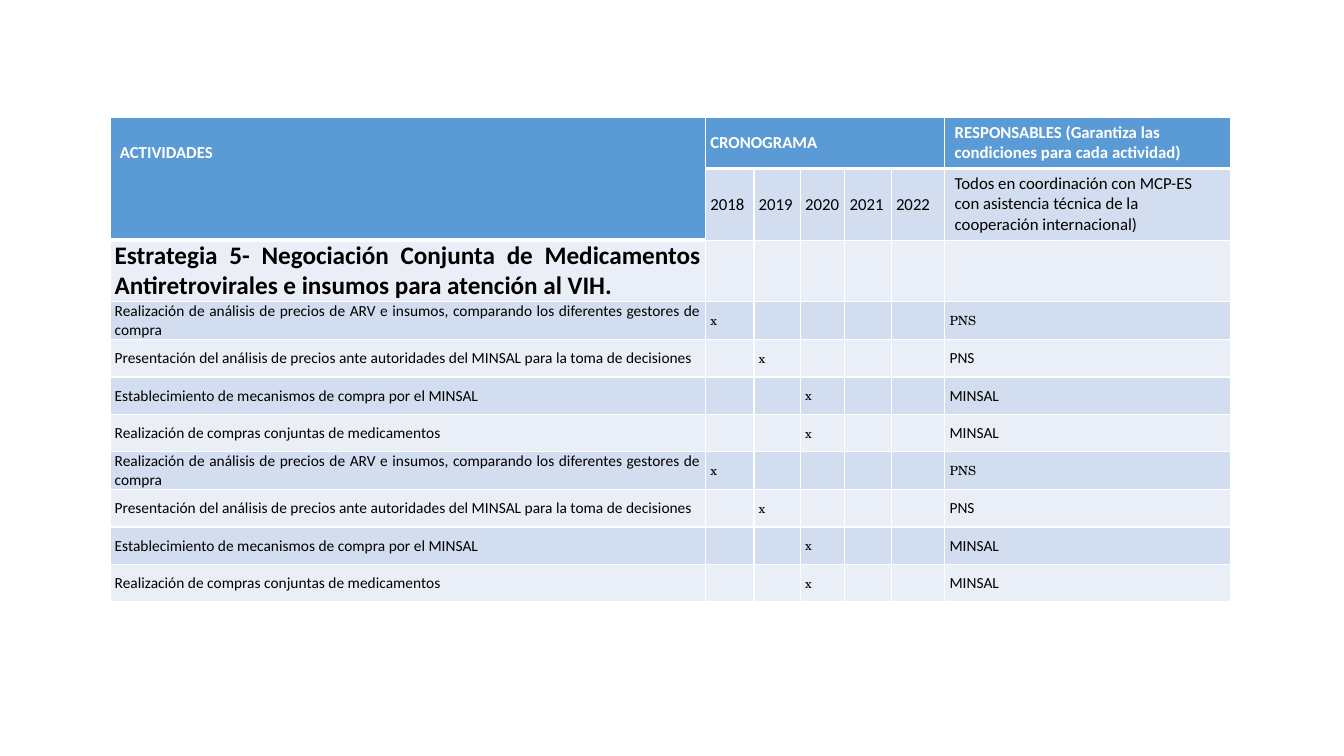
from dataclasses import dataclass

from lxml import etree
from pptx import Presentation
from pptx.dml.color import RGBColor
from pptx.enum.text import MSO_ANCHOR, PP_ALIGN
from pptx.oxml.ns import qn
from pptx.table import Table, _Cell
from pptx.util import Cm, Pt

LEFT, JUSTIFY = PP_ALIGN.LEFT, PP_ALIGN.JUSTIFY
TOP, MIDDLE = MSO_ANCHOR.TOP, MSO_ANCHOR.MIDDLE


@dataclass(frozen=True)
class Theme:
    header: str = "5B9BD5"
    bands: tuple[str, str] = ("D2DEEF", "EAEFF7")
    rule: str = "FFFFFF"
    header_text: str = "FFFFFF"
    text: str = "000000"
    font: str = "Calibri"
    mark_font: str = "TeX Gyre Schola"
    heading_size: int = 12
    strategy_size: int = 18
    activity_size: int = 11
    mark_size: int = 9
    thin: int = 1
    thick: int = 3


@dataclass(frozen=True)
class Activity:
    description: str
    year: str
    owner: str
    owner_in_mark_font: bool = False


THEME = Theme()
YEARS = ("2018", "2019", "2020", "2021", "2022")
OWNER_COLUMN = len(YEARS) + 1
FIRST_ACTIVITY_ROW = 3
STRATEGY = ("Estrategia 5- Negociación Conjunta de Medicamentos "
            "Antiretrovirales e insumos para atención al VIH.")
ACTIVITIES = 2 * [
    Activity("Realización de análisis de precios de ARV e insumos, comparando "
             "los diferentes gestores de compra", "2018", "PNS", True),
    Activity("Presentación del análisis de precios ante autoridades del MINSAL "
             "para la toma de decisiones", "2019", "PNS"),
    Activity("Establecimiento de mecanismos de compra por el MINSAL", "2020", "MINSAL"),
    Activity("Realización de compras conjuntas de medicamentos", "2020", "MINSAL"),
]
COLUMN_WIDTHS = (15.01, 1.22, 1.17, 1.12, 1.17, 1.35, 7.19)
ROW_HEIGHTS = (1.27, 1.8, 1.55) + (0.94,) * len(ACTIVITIES)


def write(cell: _Cell, text: str, *, size: int, font: str = THEME.font,
          color: str = THEME.text, bold: bool = False,
          align: PP_ALIGN = JUSTIFY, anchor: MSO_ANCHOR = MIDDLE,
          side: float = 0.12, top: float = 0, bottom: float = 0) -> None:
    """Fill a cell with one formatted run; margins are in centimetres."""
    cell.vertical_anchor = anchor
    cell.margin_left = cell.margin_right = Cm(side)
    cell.margin_top, cell.margin_bottom = Cm(top), Cm(bottom)
    paragraph = cell.text_frame.paragraphs[0]
    paragraph.alignment = align
    run = paragraph.add_run()
    run.text = text
    run.font.name, run.font.size, run.font.bold = font, Pt(size), bold
    run.font.color.rgb = RGBColor.from_string(color)


def add_borders(cell: _Cell, row: int) -> None:
    """Rule all four sides, with a thick rule between the two heading rows."""
    properties = cell._tc.get_or_add_tcPr()
    widths = {"L": THEME.thin, "R": THEME.thin,
              "T": THEME.thick if row == 1 else THEME.thin,
              "B": THEME.thick if row == 0 else THEME.thin}
    for edge, width in widths.items():
        line = etree.SubElement(properties, qn(f"a:ln{edge}"), w=str(Pt(width)))
        fill = etree.SubElement(line, qn("a:solidFill"))
        etree.SubElement(fill, qn("a:srgbClr"), val=THEME.rule)


def style_grid(table: Table) -> None:
    table.first_row = table.horz_banding = False
    for column, width in zip(table.columns, COLUMN_WIDTHS):
        column.width = Cm(width)
    for index, (row, height) in enumerate(zip(table.rows, ROW_HEIGHTS)):
        row.height = Cm(height)
        color = THEME.header if index == 0 else THEME.bands[(index + 1) % 2]
        for cell in row.cells:
            cell.margin_top = cell.margin_bottom = 0
            add_borders(cell, index)
            cell.fill.solid()
            cell.fill.fore_color.rgb = RGBColor.from_string(color)
    table.cell(0, 0).merge(table.cell(1, 0))
    table.cell(0, 1).merge(table.cell(0, len(YEARS)))


def write_headings(table: Table) -> None:
    heading = {"size": THEME.heading_size, "color": THEME.header_text,
               "bold": True, "align": LEFT}
    padded = {"anchor": TOP, "side": 0.25, "bottom": 0.13}
    write(table.cell(0, 0), "ACTIVIDADES", top=0.64, **heading, **padded)
    write(table.cell(0, 1), "CRONOGRAMA", **heading)
    write(table.cell(0, OWNER_COLUMN),
          "RESPONSABLES (Garantiza las condiciones para cada actividad)",
          top=0.13, **heading, **padded)
    for column, year in enumerate(YEARS, start=1):
        write(table.cell(1, column), year, size=THEME.heading_size)
    write(table.cell(1, OWNER_COLUMN),
          "Todos en coordinación con MCP-ES con asistencia técnica de la "
          "cooperación internacional)",
          size=THEME.heading_size, align=LEFT, top=0.13, **padded)
    write(table.cell(2, 0), STRATEGY, size=THEME.strategy_size, bold=True)


def write_activity(table: Table, row: int, activity: Activity) -> None:
    body = {"size": THEME.activity_size}
    mark = {"size": THEME.mark_size, "font": THEME.mark_font}
    write(table.cell(row, 0), activity.description, **body)
    write(table.cell(row, YEARS.index(activity.year) + 1), "x", **mark)
    write(table.cell(row, OWNER_COLUMN), activity.owner,
          **(mark if activity.owner_in_mark_font else body))


def main() -> None:
    presentation = Presentation()
    presentation.slide_width, presentation.slide_height = Cm(33.87), Cm(19.05)
    slide = presentation.slides.add_slide(presentation.slide_layouts[6])
    schedule = slide.shapes.add_table(
        len(ROW_HEIGHTS), len(COLUMN_WIDTHS), Cm(2.77), Cm(2.95),
        Cm(sum(COLUMN_WIDTHS)), Cm(sum(ROW_HEIGHTS))).table
    style_grid(schedule)
    write_headings(schedule)
    for row, activity in enumerate(ACTIVITIES, start=FIRST_ACTIVITY_ROW):
        write_activity(schedule, row, activity)
    presentation.save("out.pptx")


if __name__ == "__main__":
    main()
